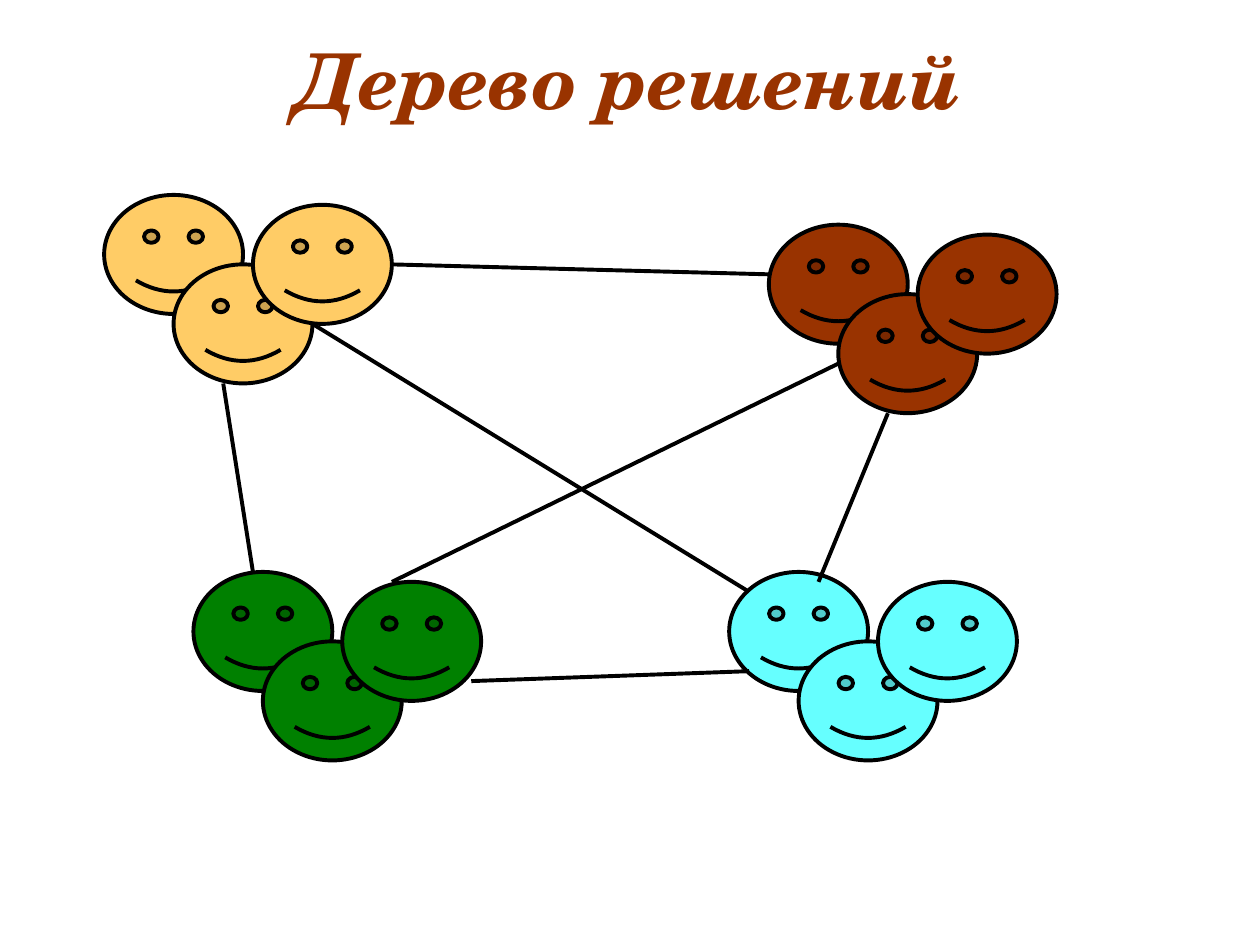
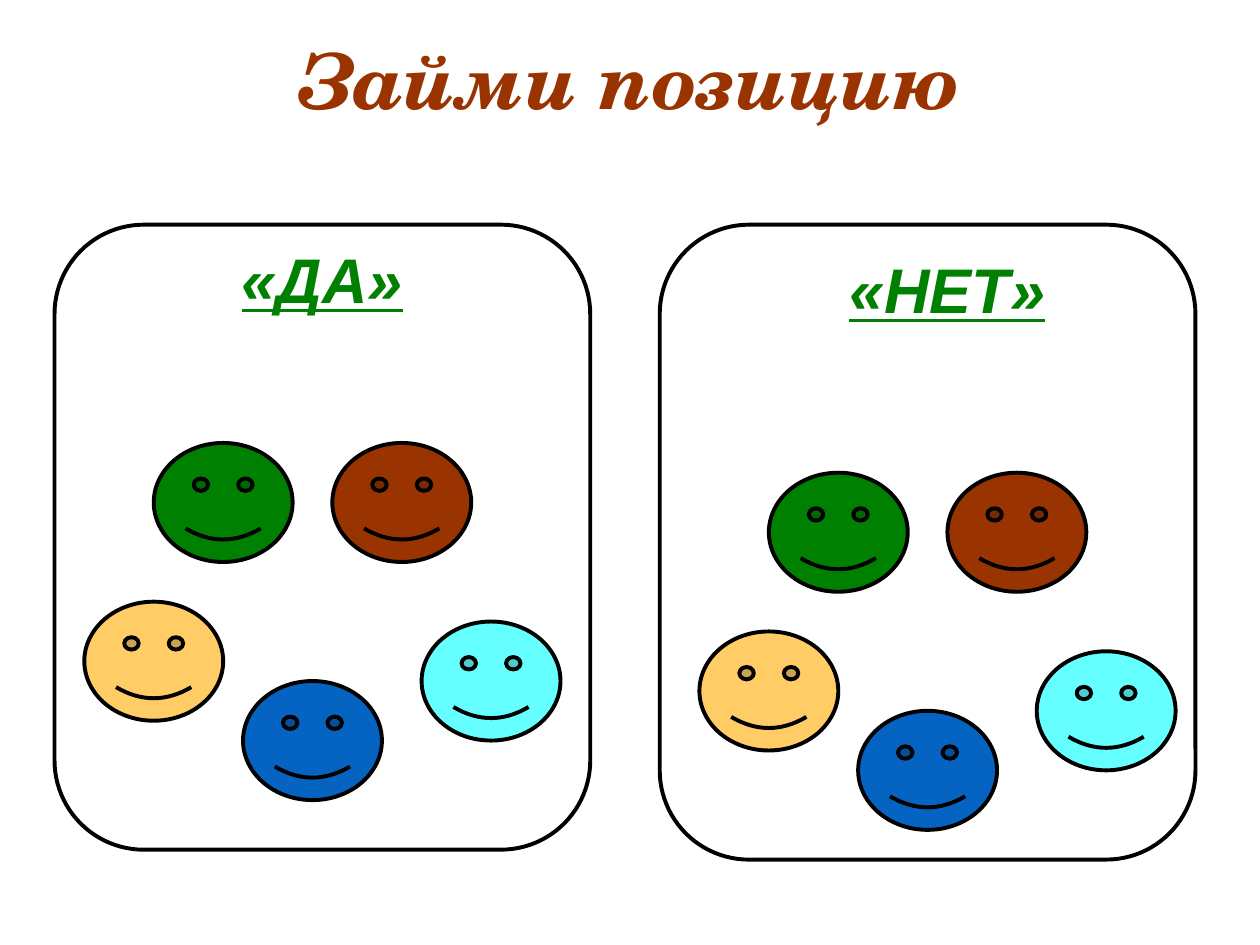
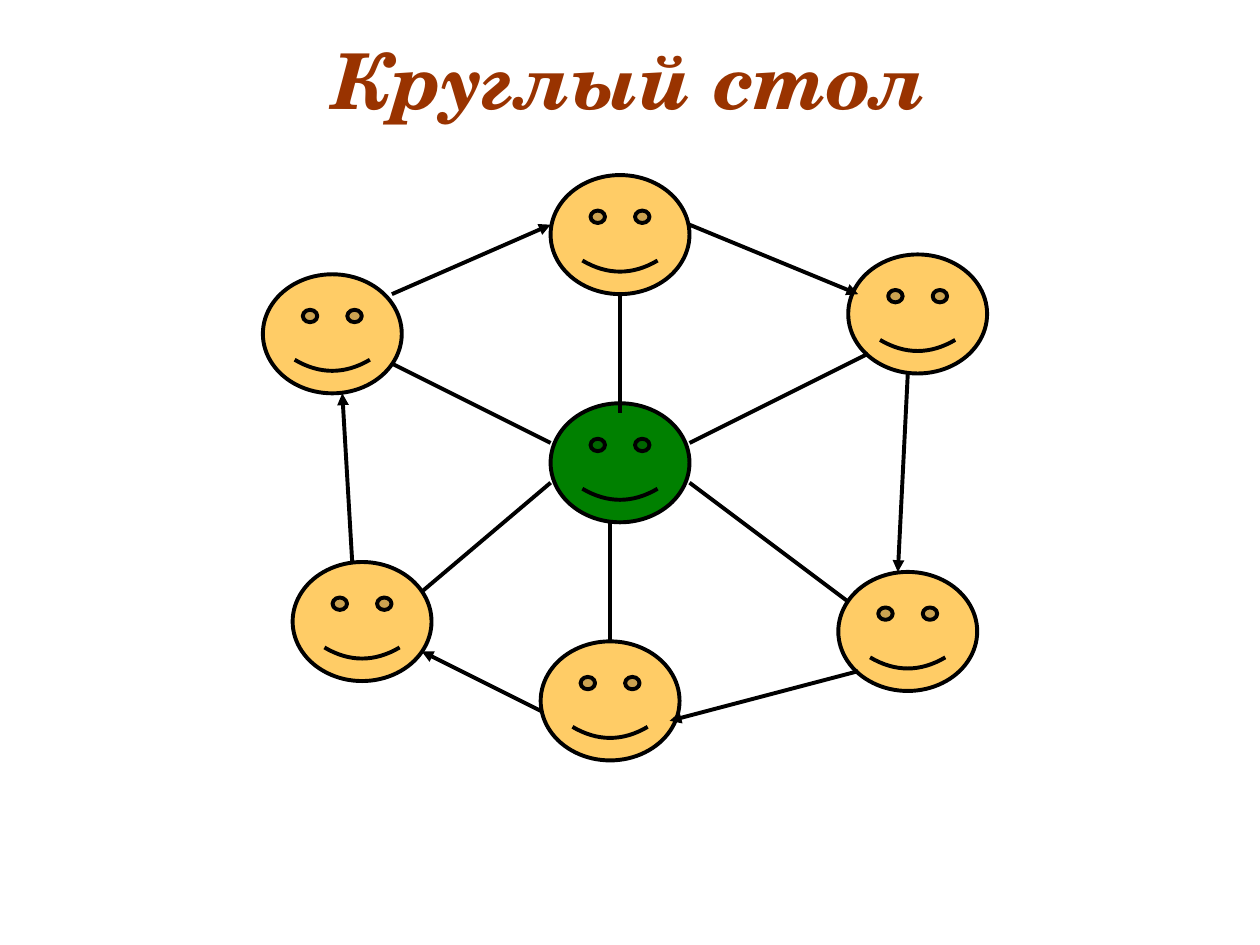
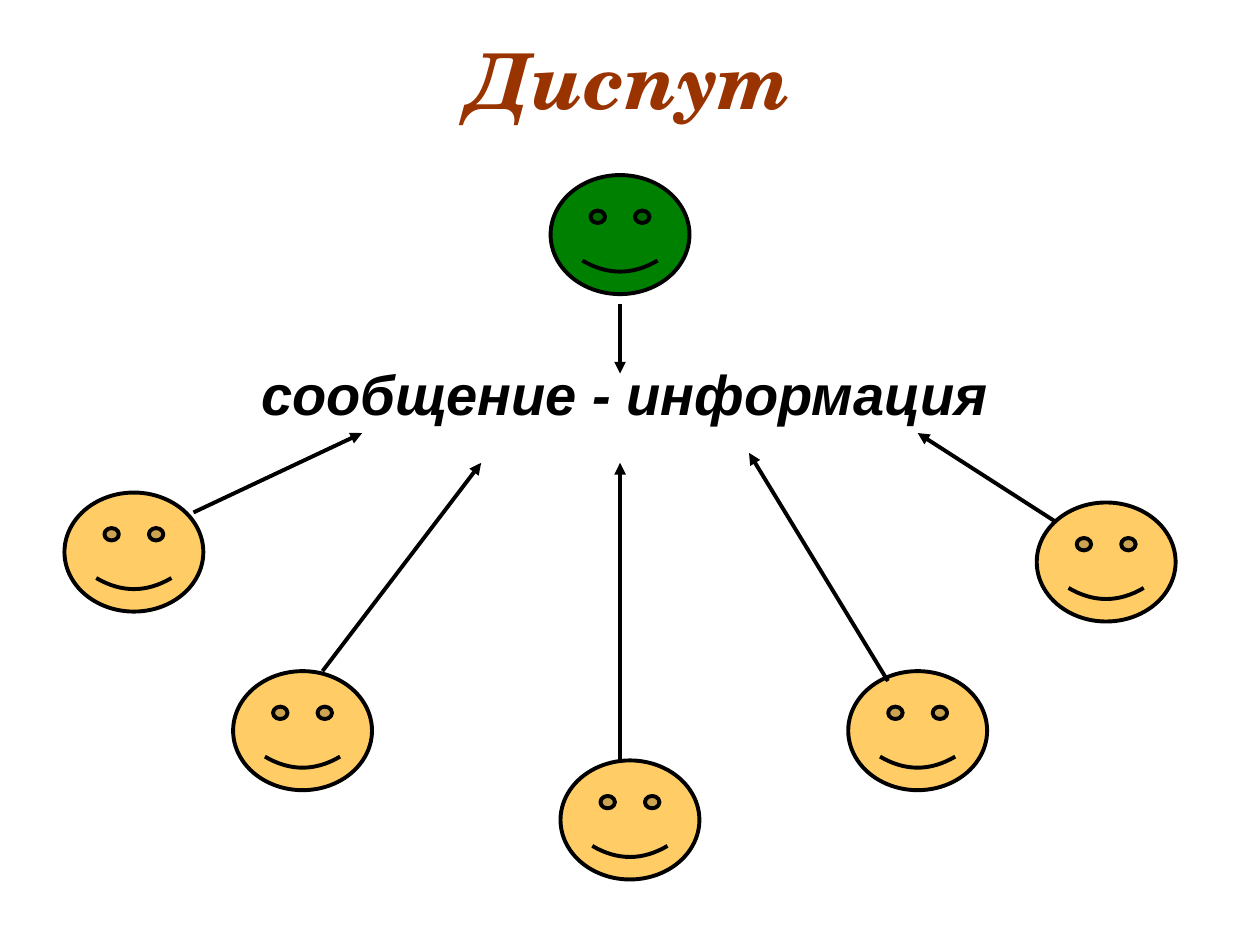
"""Build four slides that show forms of group discussion as smiling faces."""

from lxml import etree
from pptx import Presentation
from pptx.dml.color import RGBColor
from pptx.enum.shapes import MSO_CONNECTOR, MSO_SHAPE
from pptx.enum.text import MSO_AUTO_SIZE, PP_ALIGN
from pptx.oxml.ns import qn
from pptx.util import Cm, Pt

FACE = MSO_SHAPE.SMILEY_FACE
PANEL = MSO_SHAPE.ROUNDED_RECTANGLE
STRAIGHT = MSO_CONNECTOR.STRAIGHT
CENTER = PP_ALIGN.CENTER
GROW = MSO_AUTO_SIZE.SHAPE_TO_FIT_TEXT

COLORS = {
    "black": "000000",
    "white": "FFFFFF",
    "brown": "993300",
    "orange": "FFCC66",
    "green": "008000",
    "cyan": "66FFFF",
    "blue": "0563C1",
}
TITLE_FONT = {"name": "TeX Gyre Schola", "size": Pt(44), "bold": True, "italic": True}
LABEL_FONT = {"name": "Arial", "size": Pt(36), "bold": True, "italic": True, "underline": True}
MESSAGE_FONT = {"name": "Arial", "size": Pt(32), "bold": True, "italic": True}
FRAME_FORMAT = {"word_wrap": True, "auto_size": GROW}
FACE_SIZE = (2.8, 2.4)
LINE_WIDTH = Pt(2.25)


class Deck:
    """Hold the shared style and the current slide."""

    def __init__(self):
        """Start an empty 10 by 7.5 inch presentation."""
        self.presentation = Presentation()
        self.presentation.slide_width = Cm(25.4)
        self.presentation.slide_height = Cm(19.05)
        self.slide = None

    def color(self, name):
        """Return the named colour."""
        return RGBColor.from_string(COLORS[name])

    def outline(self, line):
        """Give a line the shared colour and width."""
        line.color.rgb = self.color("black")
        line.width = LINE_WIDTH

    def new_slide(self, title):
        """Add a blank slide with its title."""
        self.slide = self.presentation.slides.add_slide(self.presentation.slide_layouts[6])
        self.text(title, (0.7, 0.53, 24, 2.1), TITLE_FONT, "brown")

    def text(self, words, box, font_format, color):
        """Add one centred line of text."""
        shape = self.slide.shapes.add_textbox(*map(Cm, box))
        for name, value in FRAME_FORMAT.items():
            setattr(shape.text_frame, name, value)
        paragraph = shape.text_frame.paragraphs[0]
        paragraph.alignment = CENTER
        run = paragraph.add_run()
        run.text = words
        for name, value in font_format.items():
            setattr(run.font, name, value)
        run.font.color.rgb = self.color(color)

    def shape(self, kind, box, color):
        """Add an outlined preset shape."""
        shape = self.slide.shapes.add_shape(kind, *map(Cm, box))
        shape.shadow.inherit = False
        shape.fill.solid()
        shape.fill.fore_color.rgb = self.color(color)
        self.outline(shape.line)

    def faces(self, color, *places):
        """Add faces of one colour at the given places."""
        for place in places:
            self.shape(FACE, (*place, *FACE_SIZE), color)

    def cluster(self, color, left, top):
        """Add three overlapping faces."""
        offsets = ((0, 0), (1.4, 1.4), (3, 0.2))
        self.faces(color, *((left + across, top + down) for across, down in offsets))

    def lines(self, *ends, arrow=False):
        """Add straight lines, with arrowheads if asked."""
        for points in ends:
            connector = self.slide.shapes.add_connector(STRAIGHT, *map(Cm, points))
            self.outline(connector.line)
            properties = connector._element.spPr
            if arrow:
                etree.SubElement(properties.find(qn("a:ln")), qn("a:tailEnd"), type="triangle")
            etree.SubElement(properties, qn("a:effectLst"))


def decision_tree(deck):
    """Draw four linked groups."""
    deck.new_slide("Дерево решений")
    deck.cluster("orange", 2.1, 3.93)
    deck.cluster("brown", 15.5, 4.53)
    deck.cluster("green", 3.9, 11.53)
    deck.cluster("cyan", 14.7, 11.53)
    deck.lines(
        (6.3, 6.53, 15.1, 11.93),
        (7.9, 11.73, 16.9, 7.33),
        (7.9, 5.33, 15.5, 5.53),
        (17.9, 8.33, 16.5, 11.73),
        (4.5, 7.73, 5.1, 11.53),
        (9.5, 13.73, 15.1, 13.53),
    )


def take_position(deck):
    """Draw the yes and no panels with the same faces in each."""
    deck.new_slide("Займи позицию")
    for left, height in ((1.1, 12.6), (13.3, 12.8)):
        deck.shape(PANEL, (left, 4.53, 10.8, height), "white")
    for words, left, top in (("«ДА»", 1.9, 4.73), ("«НЕТ»", 14.5, 4.93)):
        deck.text(words, (left, top, 9.2, 1.78), LABEL_FONT, "green")
    offsets = {
        "orange": (0, 3.2),
        "brown": (5, 0),
        "green": (1.4, 0),
        "cyan": (6.8, 3.6),
        "blue": (3.2, 4.8),
    }
    for left, top in ((1.7, 8.93), (14.1, 9.53)):
        for color, (across, down) in offsets.items():
            deck.faces(color, (left + across, top + down))


def round_table(deck):
    """Draw a host amid a ring of speakers."""
    deck.new_slide("Круглый стол")
    deck.faces("green", (11.1, 8.13))
    deck.faces(
        "orange",
        (11.1, 3.53),
        (10.9, 12.93),
        (17.1, 5.13),
        (16.9, 11.53),
        (5.3, 5.53),
        (5.9, 11.33),
    )
    deck.lines(
        (12.5, 5.93, 12.5, 8.33),
        (12.3, 10.53, 12.3, 12.93),
        (11.1, 8.93, 7.9, 7.33),
        (13.9, 8.93, 17.5, 7.13),
        (11.1, 9.73, 8.5, 11.93),
        (13.9, 9.73, 17.1, 12.13),
    )
    deck.lines(
        (13.9, 4.53, 17.3, 5.93),
        (18.3, 7.53, 18.1, 11.53),
        (17.3, 13.53, 13.5, 14.53),
        (10.9, 14.33, 8.5, 13.13),
        (7.1, 11.33, 6.9, 7.93),
        (7.9, 5.93, 11.1, 4.53),
        arrow=True,
    )


def dispute(deck):
    """Draw speakers who all point at one message."""
    deck.new_slide("Диспут")
    deck.faces("green", (11.1, 3.53))
    deck.faces(
        "orange",
        (11.3, 15.33),
        (20.9, 10.13),
        (17.1, 13.53),
        (4.7, 13.53),
        (1.3, 9.93),
    )
    deck.text("сообщение - информация", (4.9, 7.13, 15.4, 1.6), MESSAGE_FONT, "black")
    deck.lines(
        (12.5, 6.13, 12.5, 7.53),
        (3.9, 10.33, 7.3, 8.73),
        (6.5, 13.53, 9.7, 9.33),
        (12.5, 15.33, 12.5, 9.33),
        (17.9, 13.73, 15.1, 9.13),
        (21.3, 10.53, 18.5, 8.73),
        arrow=True,
    )


def main():
    """Build and save the slides."""
    deck = Deck()
    for build in (decision_tree, take_position, round_table, dispute):
        build(deck)
    deck.presentation.save("out.pptx")


if __name__ == "__main__":
    main()
